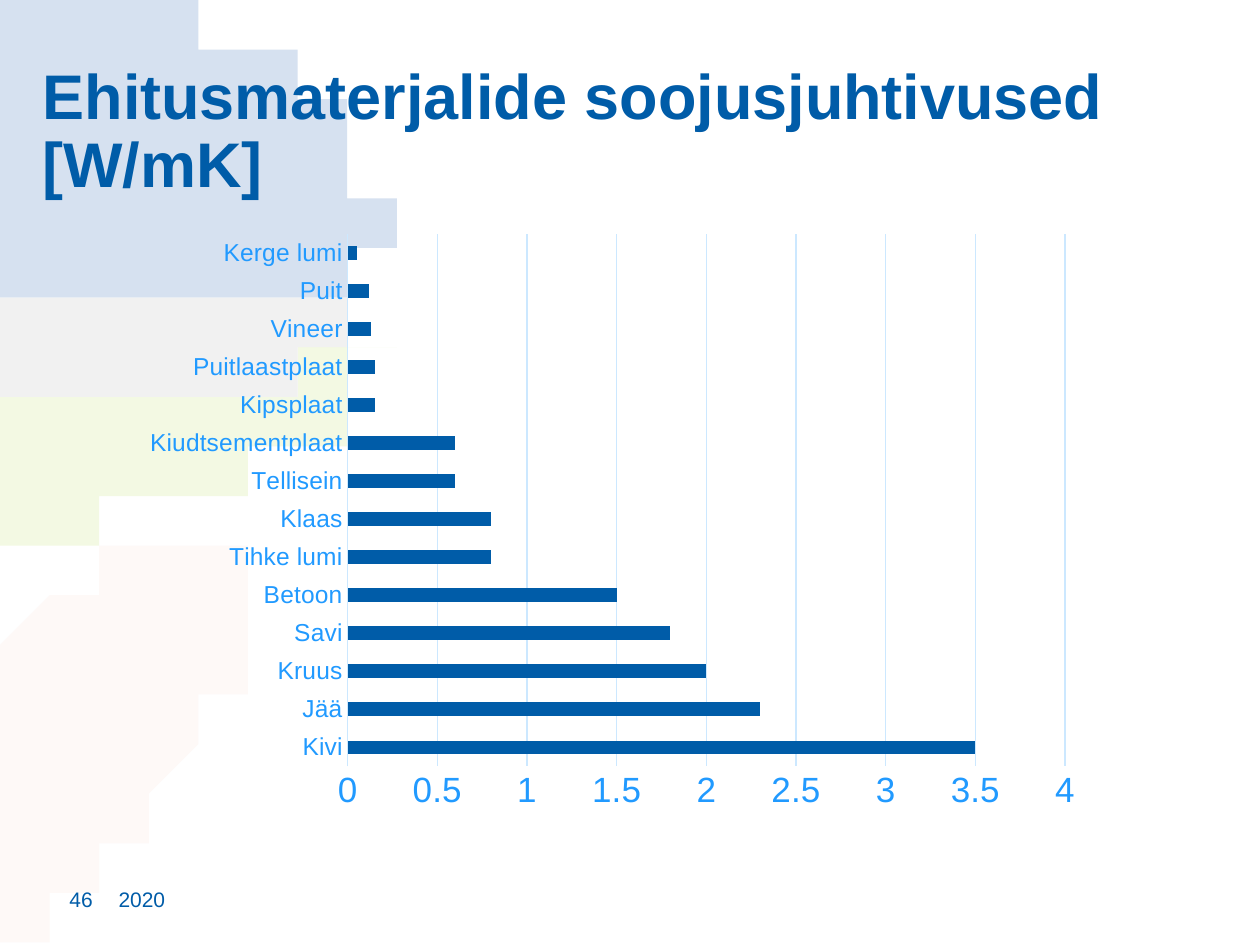
"""Build a slide with a bar chart of the thermal conductivity of building materials."""
from lxml import etree
from pptx import Presentation, util as u
from pptx.chart import data
from pptx.dml.color import RGBColor
from pptx.enum import chart as ch, text
from pptx.oxml.ns import qn

NAVY = RGBColor(0x00, 0x5C, 0xA8)
SKY = RGBColor(0x21, 0x9A, 0xFF)
PALE = RGBColor(0xCC, 0xE8, 0xFF)
BLUE_LEAF = RGBColor(0xD6, 0xE1, 0xF0)
GREEN_LEAF = RGBColor(0xF3, 0xF9, 0xE3)
GREY_LEAF = RGBColor(0xF1, 0xF1, 0xF1)
PINK_LEAF = RGBColor(0xFE, 0xF9, 0xF7)

PINK_EDGE = [(0, 13), (0.69, 12.32), (1.5, 11.71), (2.39, 11.28), (3.53, 11.05),
             (4.42, 11.23), (5, 11.61), (5.26, 12.22), (5.16, 12.88), (4.8, 13.69),
             (3.96, 14.96), (2.79, 16.36), (1.47, 17.83), (0.58, 18.69), (0.15, 19.05)]
BLUE_EDGE = [(0.76, 0), (1.91, 0.13), (3.1, 0.36), (4.17, 0.61), (5.33, 1.12),
             (6.3, 1.88), (6.93, 2.77), (7.32, 3.61), (7.52, 4.65), (7.49, 5.41),
             (7.19, 6.38)]
UPPER_EDGE = [(0, 6.35), (1.42, 5.97), (2.87, 5.72), (4.52, 5.59), (5.84, 5.72),
              (6.6, 5.97), (7.19, 6.38)]
LOWER_EDGE = [(7.19, 6.38), (6.81, 6.99), (6.1, 7.65), (5.13, 8.15), (3.96, 8.33),
              (2.54, 8.18), (1.35, 7.95), (0, 7.57)]
GREEN_EDGE = [(7.19, 6.38), (7.47, 6.78), (7.52, 7.32), (7.24, 7.95), (6.48, 8.69),
              (5.36, 9.4), (4.17, 9.91), (2.92, 10.31), (1.5, 10.64), (0, 10.97)]

CONDUCTIVITY = {
    "Kivi": 3.5, "Jää": 2.3, "Kruus": 2, "Savi": 1.8, "Betoon": 1.5,
    "Tihke lumi": 0.8, "Klaas": 0.8, "Tellisein": 0.6, "Kiudtsementplaat": 0.6,
    "Kipsplaat": 0.15, "Puitlaastplaat": 0.15, "Vineer": 0.13, "Puit": 0.12,
    "Kerge lumi": 0.05,
}


def smooth(points, steps=6):
    """Return a Catmull-Rom curve through the points."""
    ends = [points[0], *points, points[-1]]
    curve = [points[0]]
    for a, b, c, d in zip(ends, ends[1:], ends[2:], ends[3:]):
        for t in (i / steps for i in range(1, steps + 1)):
            curve.append(tuple(
                (2 * q + (r - p) * t + (2 * p - 5 * q + 4 * r - v) * t ** 2
                 + (3 * q - p - 3 * r + v) * t ** 3) / 2
                for p, q, r, v in zip(a, b, c, d)))
    return curve


class Deck:
    """Hold the style and the current slide."""

    def __init__(self):
        self.prs = Presentation()
        self.prs.slide_width, self.prs.slide_height = u.Cm(25.4), u.Cm(19.05)
        self.s = self.prs.slides.add_slide(self.prs.slide_layouts[5])

    def font(self, font, size, color, bold=False):
        for name, value in {"name": "Arial", "size": u.Pt(size), "bold": bold}.items():
            setattr(font, name, value)
        font.color.rgb = color

    def fill_text(self, sp, words, size, anchor, bold=False):
        tf = sp.text_frame
        frame = {"word_wrap": True, "auto_size": text.MSO_AUTO_SIZE.NONE,
                 "vertical_anchor": anchor, "margin_left": 0, "margin_right": 0,
                 "margin_top": 0, "margin_bottom": 0}
        for name, value in frame.items():
            setattr(tf, name, value)
        p = tf.paragraphs[0]
        p.alignment = text.PP_ALIGN.LEFT
        r = p.add_run()
        r.text = words
        self.font(r.font, size, NAVY, bold)
        return p

    def title(self, words, left, top, width, height):
        sp = self.s.shapes.title
        box = {"left": left, "top": top, "width": width, "height": height}
        for name, value in box.items():
            setattr(sp, name, u.Cm(value))
        p = self.fill_text(sp, words, 36, text.MSO_ANCHOR.TOP, True)
        p.line_spacing = 0.9
        self.s.shapes.element.append(sp.element)

    def label(self, words, *box):
        sp = self.s.shapes.add_textbox(*map(u.Cm, box))
        self.fill_text(sp, words, 12, text.MSO_ANCHOR.BOTTOM)

    def leaf(self, points, color):
        start, *rest = points
        builder = self.s.shapes.build_freeform(*start, scale=u.Cm(1))
        builder.add_line_segments(rest, close=True)
        sp = builder.convert_to_shape()
        sp.shadow.inherit = False
        sp.fill.solid()
        sp.fill.fore_color.rgb = color
        sp.line.fill.background()

    def axis(self, axis, size):
        axis.major_tick_mark = axis.minor_tick_mark = ch.XL_TICK_MARK.NONE
        self.font(axis.tick_labels.font, size, SKY)

    def line(self, line):
        line.color.rgb = PALE
        line.width = u.Pt(0.75)

    def bars(self, values, box, plot_box):
        cd = data.CategoryChartData()
        cd.categories = list(values)
        cd.add_series("Series 1", list(values.values()))
        chart = self.s.shapes.add_chart(
            ch.XL_CHART_TYPE.BAR_CLUSTERED, *map(u.Cm, box), cd).chart
        chart.has_legend = chart.has_title = False
        self.font(chart.font, 10, NAVY)
        plot = chart.plots[0]
        plot.gap_width, plot.vary_by_categories = 182, False
        fill = plot.series[0].format.fill
        fill.solid()
        fill.fore_color.rgb = NAVY
        cat, val = chart.category_axis, chart.value_axis
        self.axis(cat, 14)
        self.line(cat.format.line)
        self.axis(val, 20)
        val.format.line.fill.background()
        val.has_major_gridlines = True
        self.line(val.major_gridlines.format.line)
        scale = {"minimum_scale": 0, "maximum_scale": 4, "major_unit": 0.5}
        for name, value in scale.items():
            setattr(val, name, value)
        self.place_plot(chart, plot_box)

    def place_plot(self, chart, plot_box):
        area = chart.element.find(".//" + qn("c:plotArea"))
        for old in area.findall(qn("c:layout")):
            area.remove(old)
        layout = etree.Element(qn("c:layout"))
        area.insert(0, layout)
        manual = etree.SubElement(layout, qn("c:manualLayout"))
        settings = {"layoutTarget": "inner", "xMode": "edge", "yMode": "edge",
                    **dict(zip("xywh", plot_box))}
        for name, value in settings.items():
            etree.SubElement(manual, qn("c:" + name)).set("val", str(value))


def main():
    deck = Deck()
    upper, lower = smooth(UPPER_EDGE), smooth(LOWER_EDGE)
    deck.leaf(smooth(PINK_EDGE) + [(0, 19.05)], PINK_LEAF)
    deck.leaf(smooth(GREEN_EDGE) + lower[::-1], GREEN_LEAF)
    deck.leaf([(0, 0)] + smooth(BLUE_EDGE) + upper[::-1], BLUE_LEAF)
    deck.leaf(upper + lower, GREY_LEAF)
    deck.label("2020", 2.39, 17.96, 1.78, 0.41)
    deck.label("46", 1.4, 17.96, 0.99, 0.41)
    deck.bars(CONDUCTIVITY, (1.14, 4.32, 20.96, 13.41), (0.28, 0.03, 0.69, 0.8))
    deck.title("Ehitusmaterjalide soojusjuhtivused [W/mK]", 0.86, 1.32, 23.75, 1.63)
    deck.prs.save("out.pptx")


if __name__ == "__main__":
    main()
